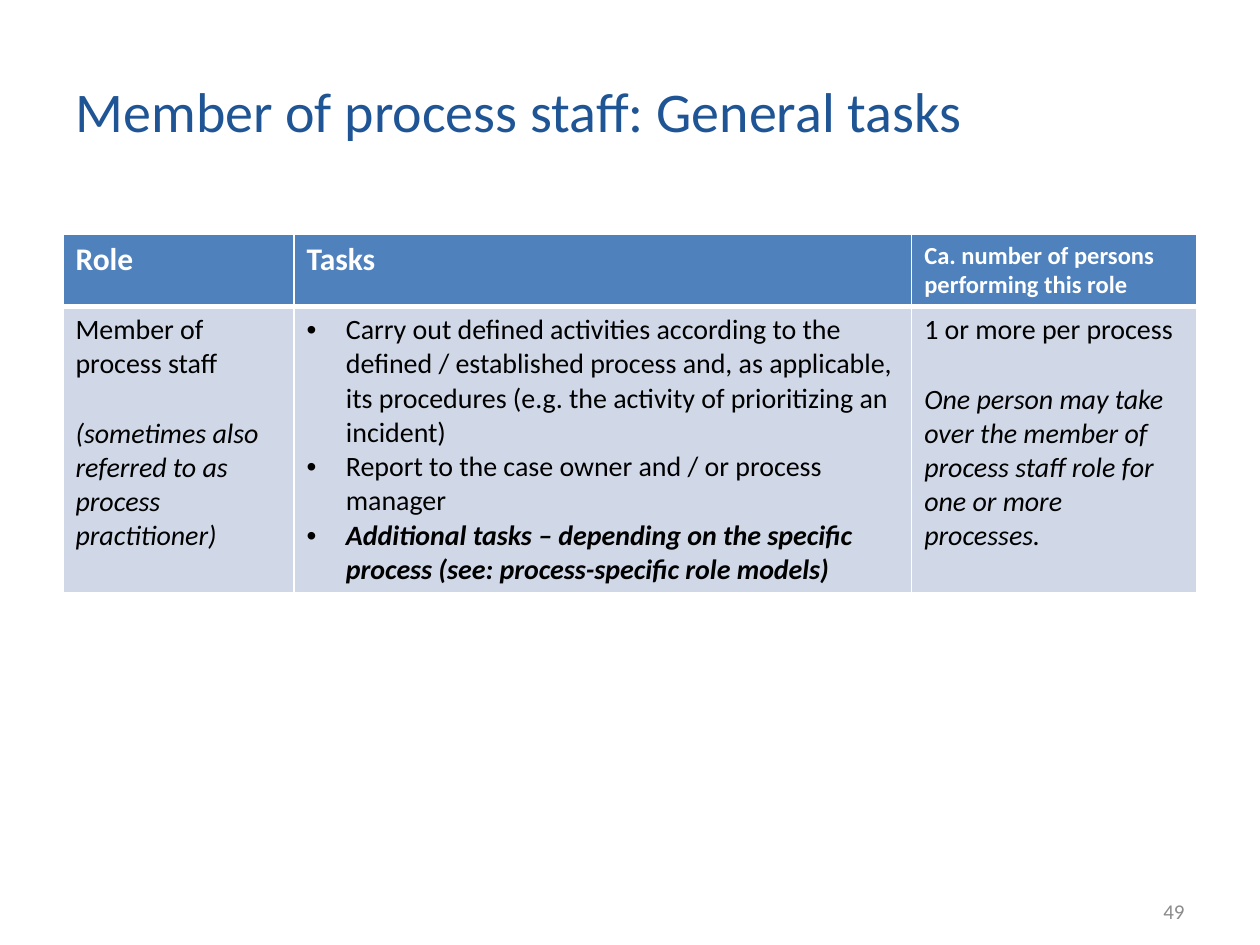
import pptx
import pptx.dml.color
import pptx.enum.text
import pptx.oxml
import pptx.oxml.ns
import pptx.util

Pt = pptx.util.Pt
RGBColor = pptx.dml.color.RGBColor
ALIGN = pptx.enum.text.PP_ALIGN
ANCHOR = pptx.enum.text.MSO_ANCHOR

TITLE_BLUE = RGBColor(0x20, 0x55, 0x95)
HEADER_BLUE = RGBColor(0x4F, 0x81, 0xBD)
BODY_FILL = RGBColor(0xD0, 0xD8, 0xE7)
WHITE = RGBColor(0xFF, 0xFF, 0xFF)
BLACK = RGBColor(0x00, 0x00, 0x00)
GREY = RGBColor(0x8B, 0x8B, 0x8B)

PLAIN, ITALIC, BOLD_ITALIC = (False, False), (False, True), (True, True)
HEADERS = [("Role", 18), ("Tasks", 18),
           ("Ca. number of persons performing this role", 14)]
ROLE = [("Member of process staff", PLAIN),
        ("(sometimes also referred to as process practitioner)", ITALIC)]
TASKS = [("Carry out defined activities according to the defined / established "
          "process and, as applicable, its procedures (e.g. the activity of "
          "prioritizing an incident)", PLAIN),
         ("Report to the case owner and / or process manager", PLAIN),
         ("Additional tasks – depending on the specific process "
          "(see: process-specific role models)", BOLD_ITALIC)]
PERSONS = [("1 or more per process", PLAIN),
           ("One person may take over the member of process staff role "
            "for one or more processes.", ITALIC)]


class SlideWriter:
    font_name = "Calibri"
    thin, thick = 1, 3
    bullet_indent = 22.5

    def __init__(self, page):
        self.page = page

    def format(self, para, size, color, bold=False, italic=False):
        for span in para.runs:
            font = span.font
            font.name, font.size = self.font_name, Pt(size)
            font.bold, font.italic = bold, italic
            font.color.rgb = color

    def title(self, text, left, top, width, height):
        box = self.page.shapes.title
        box.left, box.top, box.width, box.height = map(Pt, (left, top, width, height))
        frame = box.text_frame
        frame.text = text
        frame.auto_size = pptx.enum.text.MSO_AUTO_SIZE.NONE
        frame.vertical_anchor = ANCHOR.MIDDLE
        frame.paragraphs[0].alignment = ALIGN.LEFT
        self.format(frame.paragraphs[0], 32, TITLE_BLUE)

    def page_number(self, text, left, top, width, height):
        box = self.page.shapes.add_textbox(*map(Pt, (left, top, width, height)))
        frame = box.text_frame
        frame.word_wrap = True
        frame.vertical_anchor = ANCHOR.MIDDLE
        frame.text = text
        frame.paragraphs[0].alignment = ALIGN.RIGHT
        self.format(frame.paragraphs[0], 12, GREY)

    def table(self, left, top, widths, heights):
        frame = self.page.shapes.add_table(
            len(heights), len(widths), Pt(left), Pt(top),
            Pt(sum(widths)), Pt(sum(heights)))
        table = frame.table
        for column, width in zip(table.columns, widths):
            column.width = Pt(width)
        for row, height in zip(table.rows, heights):
            row.height = Pt(height)
        return table

    def borders(self, cell, top, bottom):
        properties = cell._tc.get_or_add_tcPr()
        sides = {"L": self.thin, "R": self.thin, "T": top, "B": bottom}
        for side, width in sides.items():
            properties.append(pptx.oxml.parse_xml(
                f'<a:ln{side} {pptx.oxml.ns.nsdecls("a")} w="{Pt(width)}">'
                f'<a:solidFill><a:srgbClr val="{WHITE}"/></a:solidFill></a:ln{side}>'))

    def fill(self, cell, color):
        cell.fill.solid()
        cell.fill.fore_color.rgb = color

    def header_cell(self, cell, text, size):
        self.borders(cell, self.thin, self.thick)
        self.fill(cell, HEADER_BLUE)
        cell.text_frame.text = text
        self.format(cell.text_frame.paragraphs[0], size, WHITE, bold=True)

    def body_cell(self, cell, lines, bulleted=False):
        self.borders(cell, self.thick, self.thin)
        self.fill(cell, BODY_FILL)
        frame = cell.text_frame
        frame.text = "\n".join(text for text, style in lines)
        for index, (para, (text, style)) in enumerate(zip(frame.paragraphs, lines)):
            if bulleted:
                self.bullet(para)
            elif index:
                para.space_before = Pt(20)
            self.format(para, 16, BLACK, *style)

    def bullet(self, para):
        properties = para._p.get_or_add_pPr()
        properties.set("marL", str(Pt(self.bullet_indent)))
        properties.set("indent", str(-Pt(self.bullet_indent)))
        for tag in (f'<a:buClr {{}}><a:srgbClr val="{BLACK}"/></a:buClr>',
                    '<a:buFont {} typeface="Arial"/>',
                    '<a:buChar {} char="•"/>'):
            properties.append(pptx.oxml.parse_xml(
                tag.format(pptx.oxml.ns.nsdecls("a"))))


def main():
    deck = pptx.Presentation()
    deck.slide_width, deck.slide_height = Pt(720), Pt(540)
    page = deck.slides.add_slide(deck.slide_layouts.get_by_name("Title Only"))
    writer = SlideWriter(page)

    # Title
    writer.title("Member of process staff: General tasks", 36, 21.6, 579, 83)

    # Role table
    table = writer.table(36, 134, widths=(132, 353, 163), heights=(40.5, 163.5))
    for column, (text, size) in enumerate(HEADERS):
        writer.header_cell(table.cell(0, column), text, size)
    for column, lines in enumerate((ROLE, TASKS, PERSONS)):
        writer.body_cell(table.cell(1, column), lines, bulleted=lines is TASKS)

    # Page number
    writer.page_number("49", 516, 506, 168, 29)

    deck.save("out.pptx")


if __name__ == "__main__":
    main()
